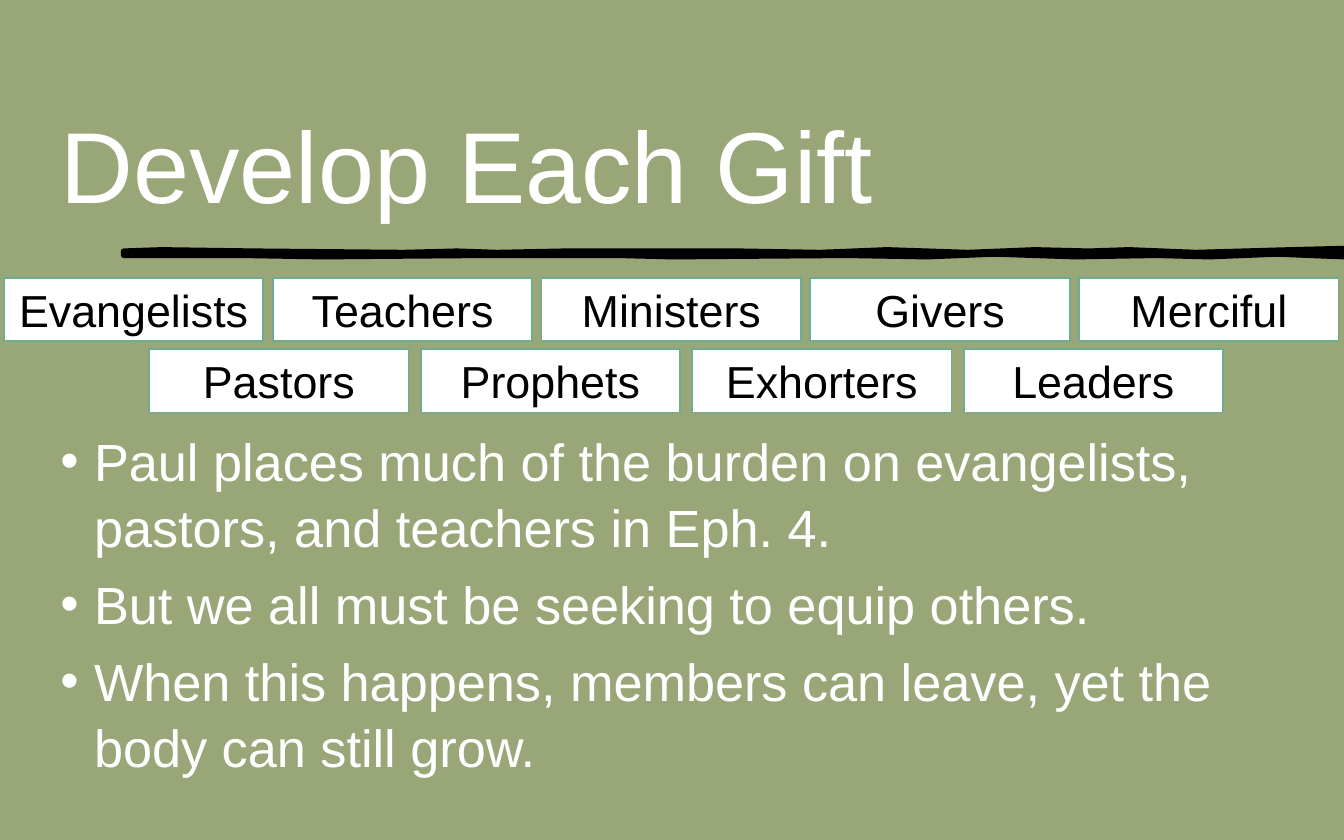
from pptx import Presentation
from pptx.dml.color import RGBColor
from pptx.enum.shapes import MSO_SHAPE
from pptx.enum.text import MSO_ANCHOR, MSO_AUTO_SIZE, PP_ALIGN
from pptx.util import Inches, Pt

TOP = ["Evangelists", "Teachers", "Ministers", "Givers", "Merciful"]
LOW = ["Pastors", "Prophets", "Exhorters", "Leaders"]
POINTS = [
    "Paul places much of the burden on evangelists, pastors, and teachers in Eph. 4.",
    "But we all must be seeking to equip others.",
    "When this happens, members can leave, yet the body can still grow.",
]
UPPER = [(0.92, 1.87), (1.2, 1.86), (1.9, 1.87), (3, 1.88), (3.4, 1.87),
         (3.7, 1.88), (4.2, 1.87), (5.5, 1.87), (6.1, 1.88), (6.6, 1.86),
         (7.2, 1.88), (7.7, 1.86), (8.1, 1.87), (8.4, 1.86), (8.9, 1.88),
         (9.6, 1.86), (10, 1.85)]
LOWER = [(10, 1.91), (9.5, 1.89), (9, 1.91), (8.6, 1.9), (8, 1.91),
         (7.4, 1.89), (6.9, 1.91), (6.3, 1.9), (5, 1.91), (4.6, 1.9),
         (3.6, 1.9), (2.4, 1.91), (1.8, 1.9), (0.92, 1.9)]


def color(text):
    return RGBColor.from_string(text)


def place(shape, left, top, width, height):
    shape.left, shape.top = Inches(left), Inches(top)
    shape.width, shape.height = Inches(width), Inches(height)


def style(para, size, tint, align):
    para.font.name = "Arial"
    para.font.size = Pt(size)
    para.font.color.rgb = color(tint)
    para.alignment = align


def paint(shape, fill, line, width):
    shape.shadow.inherit = False
    shape.fill.solid()
    shape.fill.fore_color.rgb = color(fill)
    shape.line.color.rgb = color(line)
    shape.line.width = Pt(width)


def add_title(slide, text):
    title = slide.shapes.title
    place(title, 0.35, 0.49, 9.43, 1.45)
    frame = title.text_frame
    frame.text = text
    frame.auto_size = MSO_AUTO_SIZE.NONE
    frame.vertical_anchor = MSO_ANCHOR.MIDDLE
    style(frame.paragraphs[0], 54, "FFFFFF", PP_ALIGN.LEFT)


def add_list(slide, items):
    body = slide.placeholders[1]
    place(body, 0.35, 3.12, 9.43, 3.03)
    frame = body.text_frame
    frame.text = "\n".join(items)
    frame.auto_size = MSO_AUTO_SIZE.NONE
    for num, para in enumerate(frame.paragraphs):
        style(para, 28, "FFFFFF", PP_ALIGN.LEFT)
        para.line_spacing = 1.05
        para.space_before = Pt(6 if num else 0)
        props = para._p.get_or_add_pPr()
        props.set("marL", str(Inches(0.25)))
        props.set("indent", str(-Inches(0.25)))


def add_brush(slide):
    dots = [(Inches(x), Inches(y)) for x, y in UPPER + LOWER]
    pen = slide.shapes.build_freeform(*dots[0])
    pen.add_line_segments(dots[1:], close=True)
    paint(pen.convert_to_shape(), "000000", "000000", 3)


def add_row(slide, names, left, top, step):
    for num, name in enumerate(names):
        box = slide.shapes.add_shape(
            MSO_SHAPE.RECTANGLE, Inches(left + num * step), Inches(top),
            Inches(1.93), Inches(0.47))
        paint(box, "FFFFFF", "6DAD8F", 1)
        frame = box.text_frame
        frame.text = name
        frame.word_wrap = False
        frame.vertical_anchor = MSO_ANCHOR.MIDDLE
        style(frame.paragraphs[0], 24, "000000", PP_ALIGN.CENTER)


def main():
    deck = Presentation()
    deck.slide_width, deck.slide_height = Inches(10), Inches(6.25)
    slide = deck.slides.add_slide(deck.slide_layouts[1])
    slide.background.fill.solid()
    slide.background.fill.fore_color.rgb = color("99A677")
    add_brush(slide)
    add_title(slide, "Develop Each Gift")
    add_list(slide, POINTS)
    add_row(slide, TOP, 0.03, 2.07, 2)
    add_row(slide, LOW, 1.11, 2.6, 2.02)
    deck.save("out.pptx")


if __name__ == "__main__":
    main()
